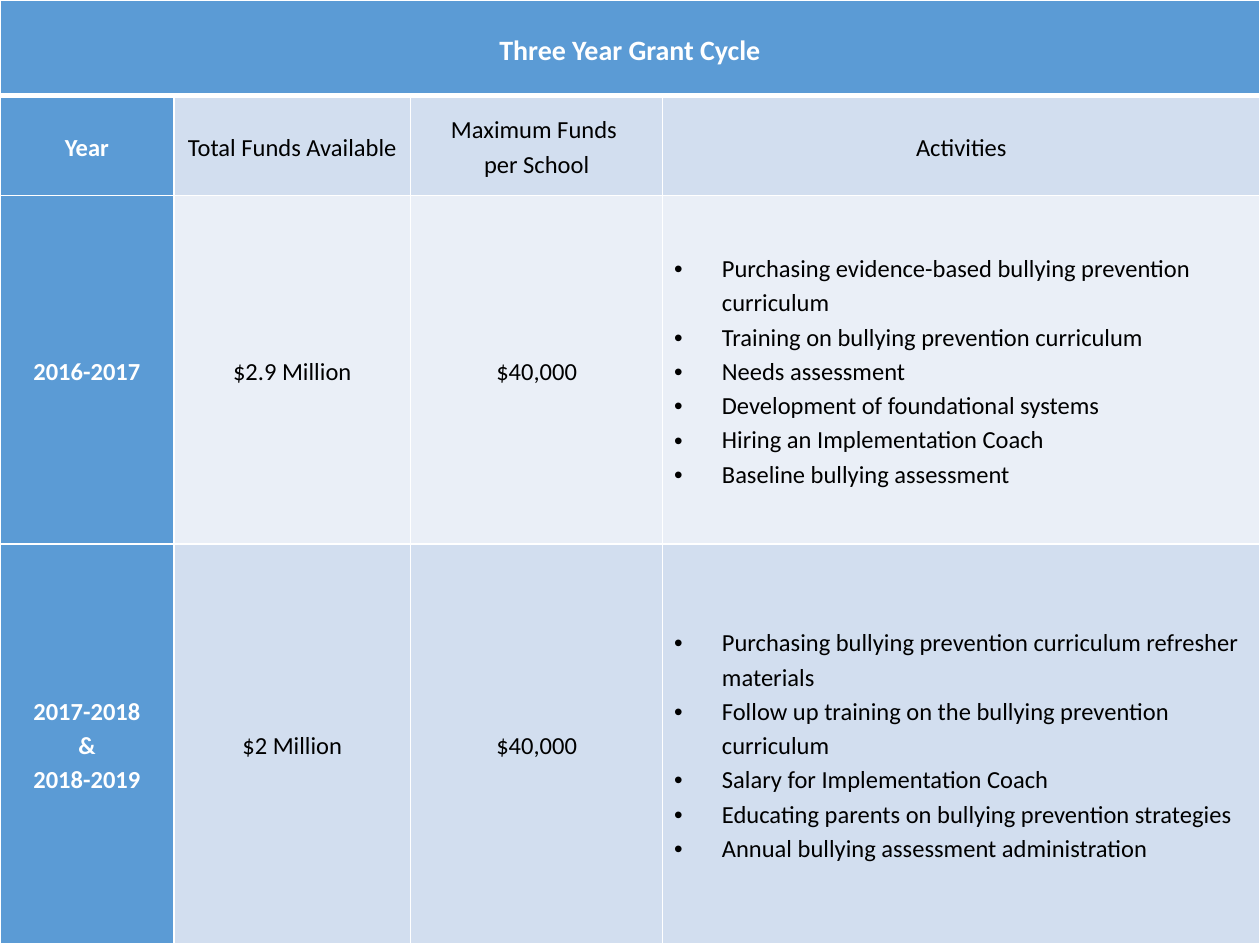
from dataclasses import dataclass

from lxml.etree import SubElement
from pptx import Presentation
from pptx.dml.color import RGBColor
from pptx.enum.text import MSO_ANCHOR, PP_ALIGN
from pptx.oxml.ns import qn
from pptx.util import Inches, Pt


@dataclass(frozen=True)
class Theme:
    font: str = "Calibri"
    head: int = 16
    body: int = 14
    blue: str = "5B9BD5"
    dark: str = "D2DEEF"
    light: str = "EAEFF7"
    white: str = "FFFFFF"
    black: str = "000000"
    thin: int = 1
    thick: int = 3


WIDTHS = [1.38, 1.88, 2, 4.74]
HEIGHTS = [0.76, 0.79, 2.77, 3.17]
INDENT = Inches(0.38)

TITLE = "Three Year Grant Cycle"
ROWS = [
    [["Year"], ["Total Funds Available"], ["Maximum Funds \vper School"],
     ["Activities"]],
    [["2016-2017"], ["$2.9 Million"], ["$40,000"], [
        "Purchasing evidence-based bullying prevention curriculum",
        "Training on bullying prevention curriculum",
        "Needs assessment",
        "Development of foundational systems",
        "Hiring an Implementation Coach",
        "Baseline bullying assessment",
    ]],
    [["2017-2018", "&", "2018-2019"], ["$2 Million"], ["$40,000"], [
        "Purchasing bullying prevention curriculum refresher materials",
        "Follow up training on the bullying prevention curriculum",
        "Salary for Implementation Coach",
        "Educating parents on bullying prevention strategies",
        "Annual bullying assessment administration",
    ]],
]


class Deck:
    def __init__(self, theme):
        self.theme = theme
        self.deck = Presentation()
        self.deck.slide_width = Inches(10)
        self.deck.slide_height = Inches(7.5)
        self.slide = self.deck.slides.add_slide(self.deck.slide_layouts[6])

    def table(self, widths, heights):
        frame = self.slide.shapes.add_table(
            len(heights), len(widths), 0, 0,
            Inches(sum(widths)), Inches(sum(heights)))
        table = frame.table
        table.first_row = table.horz_banding = False
        for col, width in zip(table.columns, widths):
            col.width = Inches(width)
        for row, height in zip(table.rows, heights):
            row.height = Inches(height)
        return table

    def cell(self, cell, fill, top, bottom):
        """Set the borders, fill and margins of a cell."""
        thin = self.theme.thin
        props = cell._tc.get_or_add_tcPr()
        for side, width in zip("LRTB", (thin, thin, top, bottom)):
            line = SubElement(props, qn(f"a:ln{side}"), w=str(Pt(width)))
            paint = SubElement(line, qn("a:solidFill"))
            SubElement(paint, qn("a:srgbClr"), val=self.theme.white)
        cell.fill.solid()
        cell.fill.fore_color.rgb = RGBColor.from_string(fill)
        cell.vertical_anchor = MSO_ANCHOR.MIDDLE
        cell.margin_left = cell.margin_right = Inches(0.09)
        cell.margin_top = cell.margin_bottom = 0

    def text(self, cell, lines, size, color, bold=False, bullets=False):
        frame = cell.text_frame
        for i, line in enumerate(lines):
            para = frame.add_paragraph() if i else frame.paragraphs[0]
            para.text = line
            para.line_spacing = 1.15
            if bullets:
                self.bullet(para)
            else:
                para.alignment = PP_ALIGN.CENTER
            font = para.font
            font.name, font.size, font.bold = self.theme.font, Pt(size), bold
            font.color.rgb = RGBColor.from_string(color)

    def bullet(self, para):
        props = para._p.get_or_add_pPr()
        props.set("marL", str(INDENT))
        props.set("indent", str(-INDENT))
        SubElement(props, qn("a:buFont"), typeface="Arial")
        SubElement(props, qn("a:buChar"), char="•")


def main():
    theme = Theme()
    deck = Deck(theme)
    table = deck.table(WIDTHS, HEIGHTS)

    for col in range(len(WIDTHS)):
        deck.cell(table.cell(0, col), theme.blue, theme.thin, theme.thick)
    title = table.cell(0, 0)
    title.merge(table.cell(0, len(WIDTHS) - 1))
    deck.text(title, [TITLE], theme.head, theme.white, bold=True)

    for r, row in enumerate(ROWS, 1):
        band = theme.dark if r % 2 else theme.light
        top = theme.thick if r == 1 else theme.thin
        for c, lines in enumerate(row):
            cell = table.cell(r, c)
            first = c == 0
            deck.cell(cell, theme.blue if first else band, top, theme.thin)
            deck.text(cell, lines, theme.body,
                      theme.white if first else theme.black,
                      bold=first, bullets=len(lines) > 1 and not first)

    deck.deck.save("out.pptx")


if __name__ == "__main__":
    main()
